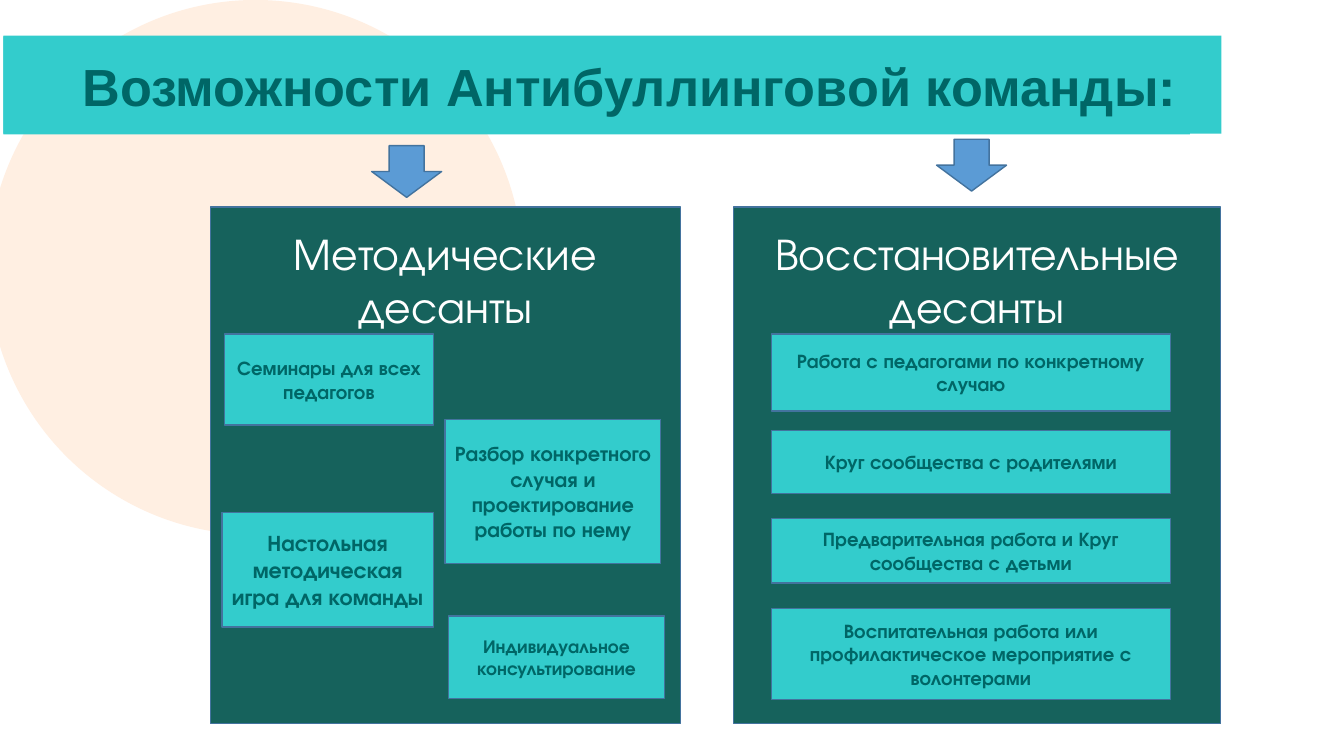
from dataclasses import dataclass

from pptx import Presentation
from pptx import util as u
from pptx.dml.color import RGBColor
from pptx.enum import shapes, text

COLORS = {
    "circle": "FFEFE2", "panel": "16625C", "card": "33CCCC", "arrow": "5B9BD5",
    "border": "43739E", "dark": "006666", "white": "FFFFFF",
}
FONT = "TeX Gyre Adventor"
SHAPE = shapes.MSO_SHAPE
ANCHOR = text.MSO_ANCHOR


@dataclass
class Box:
    left: float
    top: float
    width: float
    height: float


@dataclass
class Card:
    text: str
    box: Box
    size: float = 14


@dataclass
class Panel:
    heading: str
    box: Box
    arrow: Box
    cards: list[Card]


def color(name: str) -> RGBColor:
    return RGBColor.from_string(COLORS[name])


def place(sp, box: Box) -> None:
    sp.left, sp.top = u.Pt(box.left), u.Pt(box.top)
    sp.width, sp.height = u.Pt(box.width), u.Pt(box.height)


def add_block(s, kind, box: Box, fill: str, border: str = ""):
    sp = s.shapes.add_shape(kind, 0, 0, 0, 0)
    place(sp, box)
    sp.shadow.inherit = False
    sp.fill.solid()
    sp.fill.fore_color.rgb = color(fill)
    if border:
        sp.line.color.rgb = color(border)
        sp.line.width = u.Pt(1)
    else:
        sp.line.fill.background()
    return sp


def write(sp, content: str, size: float, ink: str, bold: bool, font: str = FONT,
          align=text.PP_ALIGN.CENTER, anchor=ANCHOR.MIDDLE,
          side: float = 6, top: float = 3.6) -> None:
    tf = sp.text_frame
    tf.word_wrap = True
    tf.auto_size = text.MSO_AUTO_SIZE.NONE
    tf.vertical_anchor = anchor
    tf.margin_left = tf.margin_right = u.Pt(side)
    tf.margin_top = tf.margin_bottom = u.Pt(top)
    p = tf.paragraphs[0]
    p.text = content
    p.alignment = align
    p.font.name, p.font.size, p.font.bold = font, u.Pt(size), bold
    p.font.color.rgb = color(ink)


def add_panel(s, panel: Panel) -> None:
    add_block(s, SHAPE.DOWN_ARROW, panel.arrow, "arrow", "border")
    sp = add_block(s, SHAPE.RECTANGLE, panel.box, "panel", "border")
    write(sp, panel.heading, 32, "white", False, anchor=ANCHOR.TOP, top=13)
    for card in panel.cards:
        sp = add_block(s, SHAPE.RECTANGLE, card.box, "card", "border")
        write(sp, card.text, card.size, "dark", True)


def wide(top: float, height: float) -> Box:
    return Box(551, top, 285, height)


PANELS = [
    Panel("Методические десанты", Box(150.5, 148, 335.5, 369), Box(265.5, 104, 50, 37), [
        Card("Настольная методическая игра для команды", Box(158.5, 366, 151, 82), 16),
        Card("Семинары для всех педагогов", Box(160.5, 238.5, 149, 65)),
        Card("Разбор конкретного случая и проектирование работы по нему",
             Box(318, 299.5, 154, 103), 15),
        Card("Индивидуальное консультирование", Box(320.5, 440, 154, 59), 13.3),
    ]),
    Panel("Восстановительные десанты", Box(524, 148, 348, 369), Box(669, 99.5, 50, 37), [
        Card("Работа с педагогами по конкретному случаю", wide(238.5, 55)),
        Card("Круг сообщества с родителями", wide(307.5, 45)),
        Card("Предварительная работа и Круг сообщества с детьми", wide(370.5, 46)),
        Card("Воспитательная работа или профилактическое мероприятие с волонтерами",
             wide(434.5, 65)),
    ]),
]


def main() -> None:
    prs = Presentation()
    prs.slide_width, prs.slide_height = u.Pt(960), u.Pt(540)
    s = prs.slides.add_slide(prs.slide_layouts[5])

    # Background circle
    add_block(s, SHAPE.FLOWCHART_CONNECTOR, Box(-8.5, 0, 382, 382), "circle")

    # Panels with their arrows and cards
    for panel in PANELS:
        add_panel(s, panel)

    # Title band, with the title on top
    add_block(s, SHAPE.RECTANGLE, Box(2.5, 25.5, 870, 70), "card")
    title = s.shapes.title
    s.shapes._spTree.append(title._element)
    place(title, Box(2.5, 26, 847.5, 70))
    title.fill.solid()
    title.fill.fore_color.rgb = color("card")
    write(title, "Возможности Антибуллинговой команды:", 37.3, "dark", True,
          font="Arial", align=text.PP_ALIGN.RIGHT, side=9.5, top=9.5)

    prs.save("out.pptx")


if __name__ == "__main__":
    main()
